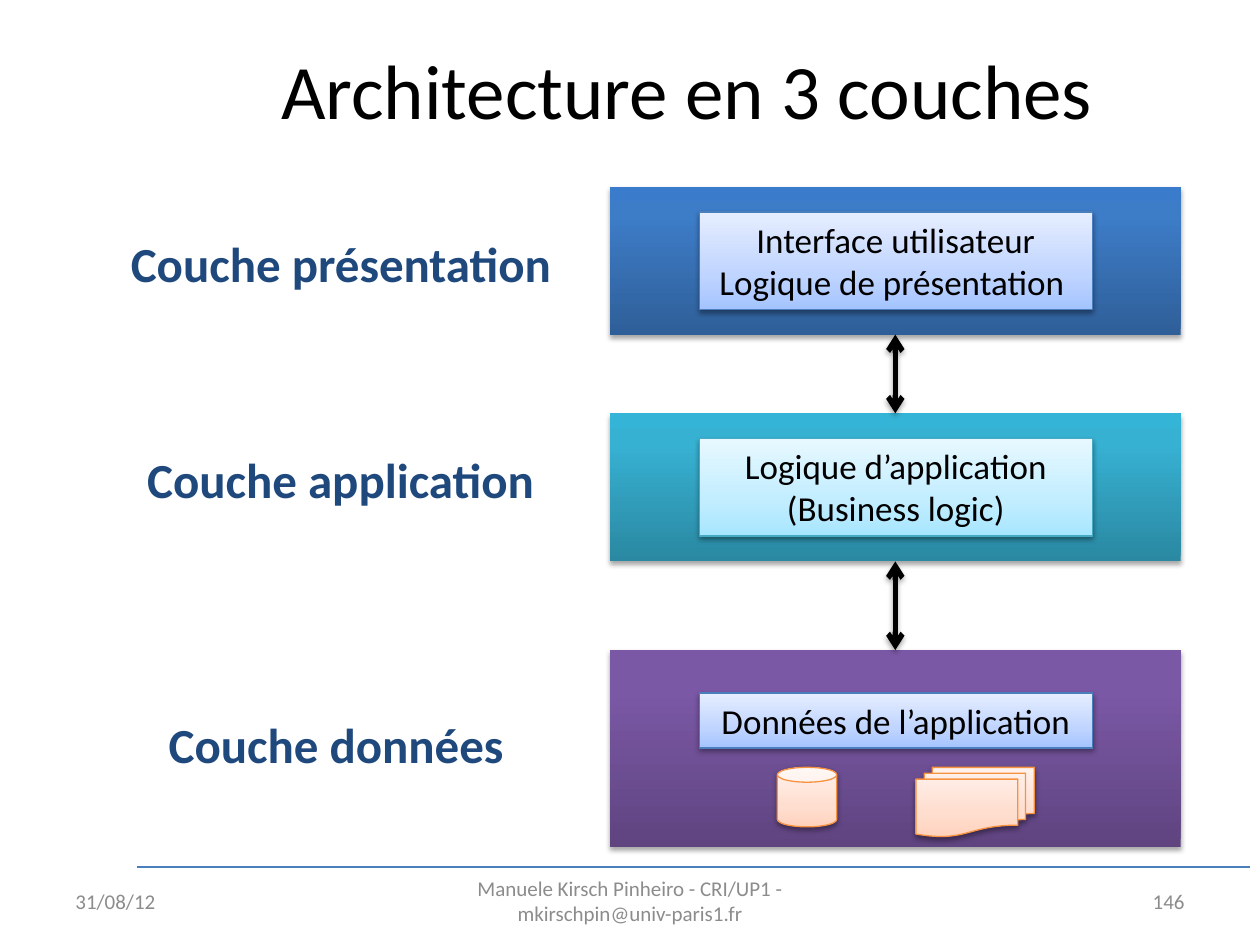
from dataclasses import dataclass

from lxml import etree
from pptx import Presentation
from pptx.dml.color import RGBColor
from pptx.enum.shapes import MSO_CONNECTOR, MSO_SHAPE
from pptx.enum.text import MSO_ANCHOR, MSO_AUTO_SIZE, PP_ALIGN
from pptx.oxml.ns import qn
from pptx.util import Pt

RECTANGLE, CAN = MSO_SHAPE.RECTANGLE, MSO_SHAPE.CAN
DOCUMENTS = MSO_SHAPE.FLOWCHART_MULTIDOCUMENT
STRAIGHT = MSO_CONNECTOR.STRAIGHT
LEFT, CENTER, RIGHT = PP_ALIGN.LEFT, PP_ALIGN.CENTER, PP_ALIGN.RIGHT
MIDDLE, TOP = MSO_ANCHOR.MIDDLE, MSO_ANCHOR.TOP
FIT_SHAPE = MSO_AUTO_SIZE.SHAPE_TO_FIT_TEXT

Stops = tuple[tuple[int, str], ...]


@dataclass(frozen=True)
class Tint:
    stops: Stops
    line: str


@dataclass(frozen=True)
class Theme:
    font: str = "Calibri"
    title_size: float = 44
    label_size: float = 28
    box_size: float = 20
    footer_size: float = 12
    black: str = "000000"
    white: str = "FFFFFF"
    label: str = "1F497D"
    footer: str = "8C8C8C"
    rule: str = "4B7EBC"
    thin: float = 0.75
    thick: float = 3
    blue: Stops = ((0, "2F5F99"), (80, "3D7CC7"), (100, "3A7CCB"))
    teal: Stops = ((0, "2A88A2"), (80, "37B1D2"), (100, "34B4D6"))
    purple: Stops = ((0, "5F4480"), (80, "7B58A6"), (100, "7C57A8"))
    pale_blue: Tint = Tint(((0, "A4C4FF"), (35, "BFD4FF"), (100, "E6EEFF")), "4B7EBC")
    pale_teal: Tint = Tint(((0, "A7E6FF"), (35, "C1EDFF"), (100, "E7F8FF")), "46AAC5")
    pale_orange: Tint = Tint(((0, "FFD2BD"), (35, "FFDED0"), (100, "FFF2ED")), "F69240")


THEME = Theme()


@dataclass(frozen=True)
class Area:
    left: float
    top: float
    width: float
    height: float

    def lengths(self) -> list:
        return [Pt(v) for v in (self.left, self.top, self.width, self.height)]


@dataclass(frozen=True)
class Layer:
    label: str
    label_area: Area
    area: Area
    stops: Stops
    box_area: Area
    box_tint: Tint
    lines: tuple[str, ...]


@dataclass(frozen=True)
class Caption:
    text: str
    area: Area
    align: PP_ALIGN
    size: float
    color: str


def add_shadow(properties, opacity: int, distance: float) -> None:
    effects = etree.SubElement(properties, qn("a:effectLst"))
    shadow = etree.SubElement(effects, qn("a:outerShdw"), {
        "blurRad": str(Pt(3.1)), "dist": str(Pt(distance)),
        "dir": "5400000", "rotWithShape": "0"})
    color = etree.SubElement(shadow, qn("a:srgbClr"), val=THEME.black)
    etree.SubElement(color, qn("a:alpha"), val=str(opacity * 1000))


def write_text(shape, lines: tuple[str, ...], align: PP_ALIGN, color: str,
               size: float, bold: bool = False) -> None:
    font_format = {"name": THEME.font, "size": Pt(size), "bold": bold}
    frame = shape.text_frame
    for index, line in enumerate(lines):
        para = frame.add_paragraph() if index else frame.paragraphs[0]
        para.alignment = align
        span = para.add_run()
        span.text = line
        for name, value in font_format.items():
            setattr(span.font, name, value)
        span.font.color.rgb = RGBColor.from_string(color)


def format_frame(shape, **frame_format) -> None:
    for name, value in frame_format.items():
        setattr(shape.text_frame, name, value)


def add_gradient_shape(page, kind: MSO_SHAPE, area: Area, stops: Stops,
                       line: str | None = None):
    shape = page.shapes.add_shape(kind, *area.lengths())
    shape.fill.gradient()
    shape.fill.gradient_angle = 90
    stop_list = shape.element.spPr.find(".//" + qn("a:gsLst"))
    for stop in list(stop_list):
        stop_list.remove(stop)
    for position, color in stops:
        stop = etree.SubElement(stop_list, qn("a:gs"), pos=str(position * 1000))
        etree.SubElement(stop, qn("a:srgbClr"), val=color)
    if line:
        shape.line.color.rgb = RGBColor.from_string(line)
        shape.line.width = Pt(THEME.thin)
    else:
        shape.line.fill.background()
    add_shadow(shape.element.spPr, *((38, 1.6) if line else (35, 1.8)))
    return shape


def add_line(page, start: tuple, end: tuple, color: str, width: float,
             arrows: bool = False) -> None:
    line = page.shapes.add_connector(STRAIGHT, *map(Pt, start + end))
    line.line.color.rgb = RGBColor.from_string(color)
    line.line.width = Pt(width)
    properties = line.element.spPr
    if arrows:
        for end_name in ("a:headEnd", "a:tailEnd"):
            etree.SubElement(properties.find(qn("a:ln")), qn(end_name), type="arrow")
        add_shadow(properties, 35, 1.8)
    else:
        etree.SubElement(properties, qn("a:effectLst"))


def add_layer(page, layer: Layer) -> None:
    add_gradient_shape(page, RECTANGLE, layer.area, layer.stops)
    box = add_gradient_shape(page, RECTANGLE, layer.box_area,
                             layer.box_tint.stops, layer.box_tint.line)
    format_frame(box, word_wrap=True, auto_size=FIT_SHAPE, vertical_anchor=TOP)
    write_text(box, layer.lines, CENTER, THEME.black, THEME.box_size)

    label = page.shapes.add_shape(RECTANGLE, *layer.label_area.lengths())
    label.shadow.inherit = False
    label.fill.solid()
    label.fill.fore_color.rgb = RGBColor.from_string(THEME.white)
    label.line.fill.background()
    format_frame(label, word_wrap=False, auto_size=FIT_SHAPE, vertical_anchor=TOP)
    write_text(label, (layer.label,), LEFT, THEME.label, THEME.label_size, True)


def add_caption(page, caption: Caption) -> None:
    box = page.shapes.add_textbox(*caption.area.lengths())
    format_frame(box, word_wrap=True, vertical_anchor=MIDDLE)
    write_text(box, (caption.text,), caption.align, caption.color, caption.size)


def layer_area(top: float, height: float) -> Area:
    return Area(348.5, top, 326.2, height)


def box_area(top: float, height: float) -> Area:
    return Area(399.6, top, 224.6, height)


def footer(text: str, left: float, width: float, align: PP_ALIGN) -> Caption:
    return Caption(text, Area(left, 500.5, width, 28.75), align,
                   THEME.footer_size, THEME.footer)


LAYERS = (
    Layer("Couche présentation", Area(67.7, 129.6, 257.8, 41.2),
          layer_area(106.6, 84.6), THEME.blue, box_area(121.2, 55.7),
          THEME.pale_blue, ("Interface utilisateur", "Logique de présentation ")),
    Layer("Couche application", Area(77, 253.4, 238.3, 41.2),
          layer_area(236.2, 84.6), THEME.teal, box_area(250.6, 55.7),
          THEME.pale_teal, ("Logique d’application", "(Business logic)")),
    Layer("Couche données", Area(89.3, 404.8, 214.6, 41.2),
          layer_area(371.5, 112.5), THEME.purple, box_area(396, 31.5),
          THEME.pale_blue, ("Données de l’application",)),
)
CAPTIONS = (
    Caption("Architecture en 3 couches", Area(101.5, 5.75, 582.5, 90), CENTER,
            THEME.title_size, THEME.black),
    footer("31/08/12", 36, 168, LEFT),
    footer("Manuele Kirsch Pinheiro - CRI/UP1 - mkirschpin@univ-paris1.fr",
           246, 228, CENTER),
    footer("146", 516, 168, RIGHT),
)
STORES = ((CAN, Area(444.2, 438.5, 34, 34)),
          (DOCUMENTS, Area(523.4, 438.5, 67.7, 39.6)))


def main() -> None:
    deck = Presentation()
    deck.slide_width, deck.slide_height = Pt(720), Pt(540)
    page = deck.slides.add_slide(deck.slide_layouts[6])

    # Footer rule, title and footer
    add_line(page, (78.5, 495.4), (714.2, 495.4), THEME.rule, THEME.thin)
    for caption in CAPTIONS:
        add_caption(page, caption)

    # Layers with their labels
    for layer in LAYERS:
        add_layer(page, layer)

    # Data stores in the bottom layer
    for kind, area in STORES:
        add_gradient_shape(page, kind, area, THEME.pale_orange.stops,
                           THEME.pale_orange.line)

    # Arrows between neighbouring layers
    for upper, lower in zip(LAYERS, LAYERS[1:]):
        middle = upper.area.left + upper.area.width / 2
        add_line(page, (middle, upper.area.top + upper.area.height),
                 (middle, lower.area.top), THEME.black, THEME.thick, arrows=True)

    deck.save("out.pptx")


if __name__ == "__main__":
    main()
